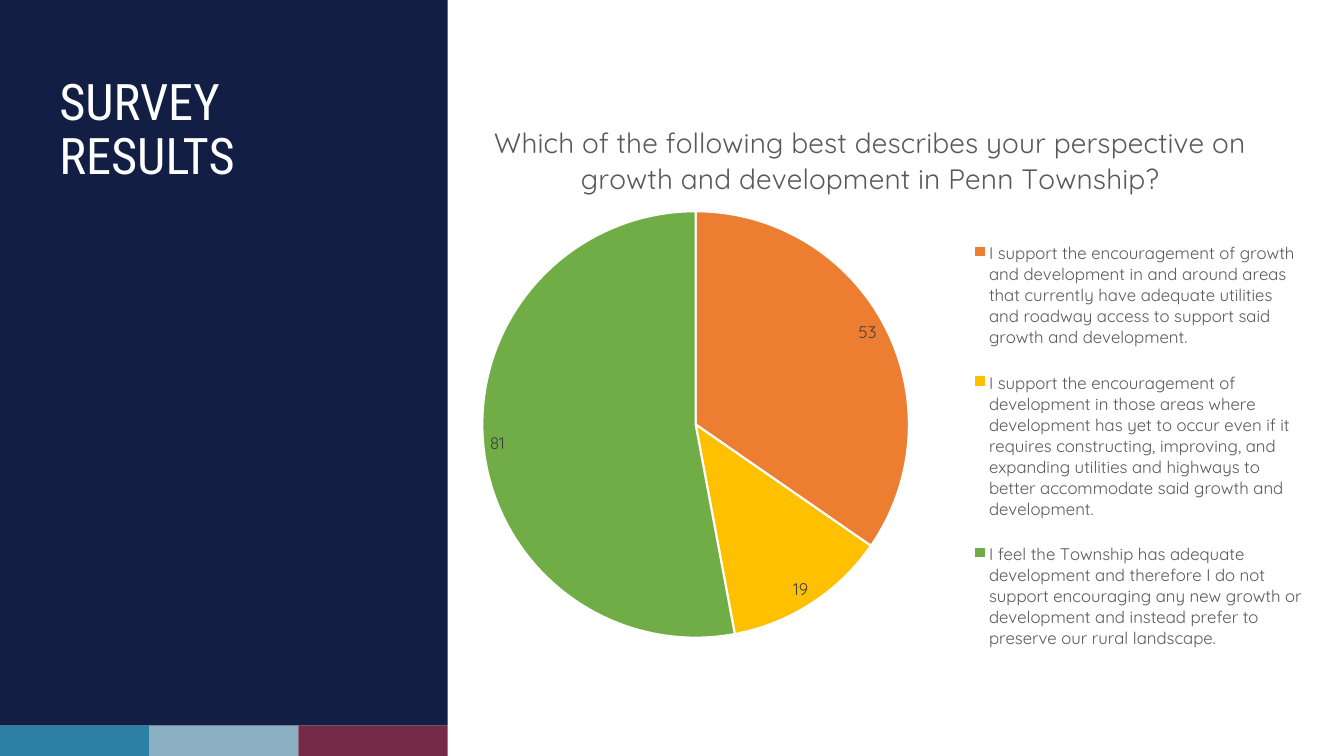
from typing import Any, NamedTuple

from lxml.etree import SubElement
from pptx import Presentation
from pptx.chart.data import CategoryChartData
from pptx.dml.color import RGBColor
from pptx.enum.chart import XL_CHART_TYPE, XL_LABEL_POSITION, XL_LEGEND_POSITION
from pptx.enum.shapes import MSO_SHAPE
from pptx.enum.text import MSO_ANCHOR
from pptx.oxml.ns import qn
from pptx.util import Inches, Pt

COLORS = {
    "navy": "121E44", "teal": "2C7FA5", "mist": "8CB0C3", "wine": "752B47",
    "white": "FFFFFF", "gray": "595959", "dark": "404040",
    "orange": "ED7D31", "gold": "FFC000", "green": "70AD47",
}
BODY = "Quicksand"
HEAD = "Roboto Condensed"
SIDE = 4.44
STRIP = SIDE / 3


class Panel(NamedTuple):
    left: float
    top: float
    width: float
    height: float
    color: str


class Answer(NamedTuple):
    text: str
    count: int
    color: str


PANELS = [Panel(0, 0, SIDE, 7.2, "navy")] + [
    Panel(i * STRIP, 7.2, STRIP, 0.3, color)
    for i, color in enumerate(("teal", "mist", "wine"))
]
ANSWERS = [
    Answer("I support the encouragement of growth and development in and around "
           "areas that currently have adequate utilities and roadway access to "
           "support said growth and development.", 53, "orange"),
    Answer("I support the encouragement of development in those areas where "
           "development has yet to occur even if it requires constructing, "
           "improving, and expanding utilities and highways to better "
           "accommodate said growth and development.", 19, "gold"),
    Answer("I feel the Township has adequate development and therefore I do not "
           "support encouraging any new growth or development and instead prefer "
           "to preserve our rural landscape.", 81, "green"),
]


def tint(name: str) -> RGBColor:
    return RGBColor.from_string(COLORS[name])


def style(item: Any, values: dict[str, Any]) -> None:
    for key, value in values.items():
        setattr(item, key, value)


def ink(font: Any, name: str, size: float, color: str) -> None:
    style(font, {"name": name, "size": Pt(size), "bold": False})
    font.color.rgb = tint(color)


def draw(slide: Any, panel: Panel) -> None:
    box = [Inches(v) for v in panel[:4]]
    shape = slide.shapes.add_shape(MSO_SHAPE.RECTANGLE, *box)
    shape.shadow.inherit = False
    shape.fill.solid()
    shape.fill.fore_color.rgb = tint(panel.color)
    shape.line.fill.background()


def place(node: Any, inner: bool = False, **shares: float) -> None:
    layout = node.find(qn("c:layout"))
    if layout is None:
        layout = SubElement(node, qn("c:layout"))
        ahead = [c for c in node if c.tag in (qn("c:tx"), qn("c:legendPos"))]
        node.insert(len(ahead), layout)
    for child in list(layout):
        layout.remove(child)
    manual = SubElement(layout, qn("c:manualLayout"))
    if inner:
        SubElement(manual, qn("c:layoutTarget")).set("val", "inner")
    for key in ("x", "y"):
        SubElement(manual, qn(f"c:{key}Mode")).set("val", "edge")
    for key, percent in shares.items():
        share = round(percent / 100, 4)
        SubElement(manual, qn(f"c:{key}")).set("val", str(share))


def head(slide: Any) -> None:
    box = slide.shapes.add_textbox(
        Inches(0.49), Inches(0.71), Inches(3.62), Inches(5.71))
    frame = box.text_frame
    style(frame, {"word_wrap": True, "vertical_anchor": MSO_ANCHOR.TOP,
                  "margin_right": Inches(0.4)})
    para = frame.paragraphs[0]
    para.line_spacing = 0.9
    run = para.add_run()
    run.text = "SURVEY RESULTS"
    ink(run.font, HEAD, 36, "white")


def pie(slide: Any) -> None:
    data = CategoryChartData()
    data.categories = [a.text for a in ANSWERS]
    data.add_series("Series 1", [a.count for a in ANSWERS])
    chart = slide.shapes.add_chart(
        XL_CHART_TYPE.PIE, Inches(3.5), Inches(1.08), Inches(9.94),
        Inches(5.71), data).chart
    chart.font.name = BODY
    chart.font.size = Pt(10)

    chart.has_title = True
    title = chart.chart_title
    run = title.text_frame.paragraphs[0].add_run()
    run.text = ("Which of the following best describes your perspective on "
                "growth and development in Penn Township?")
    ink(run.font, BODY, 20, "gray")
    title.include_in_layout = False
    place(title._element, x=13.6, y=1.4)

    chart.has_legend = True
    legend = chart.legend
    style(legend, {"position": XL_LEGEND_POSITION.BOTTOM,
                   "include_in_layout": False})
    ink(legend.font, BODY, 12, "gray")
    place(legend._element, x=61.9, y=19.1, w=33, h=79)

    plot = chart.plots[0]
    plot.vary_by_categories = True
    area = chart._chartSpace.chart.plotArea
    place(area, inner=True, x=11.4, y=17.8, w=45.6, h=74.1)

    plot.has_data_labels = True
    labels = plot.data_labels
    style(labels, {"show_value": True, "show_percentage": False,
                   "position": XL_LABEL_POSITION.BEST_FIT})
    ink(labels.font, BODY, 12, "dark")
    for i, answer in enumerate(ANSWERS):
        look = plot.series[0].points[i].format
        look.fill.solid()
        look.fill.fore_color.rgb = tint(answer.color)
        look.line.color.rgb = tint("white")
        look.line.width = Pt(1.5)


def main() -> None:
    deck = Presentation()
    style(deck, {"slide_width": Inches(13.33), "slide_height": Inches(7.5)})
    slide = deck.slides.add_slide(deck.slide_layouts[6])
    for panel in PANELS:
        draw(slide, panel)
    head(slide)
    pie(slide)
    deck.save("out.pptx")


if __name__ == "__main__":
    main()
